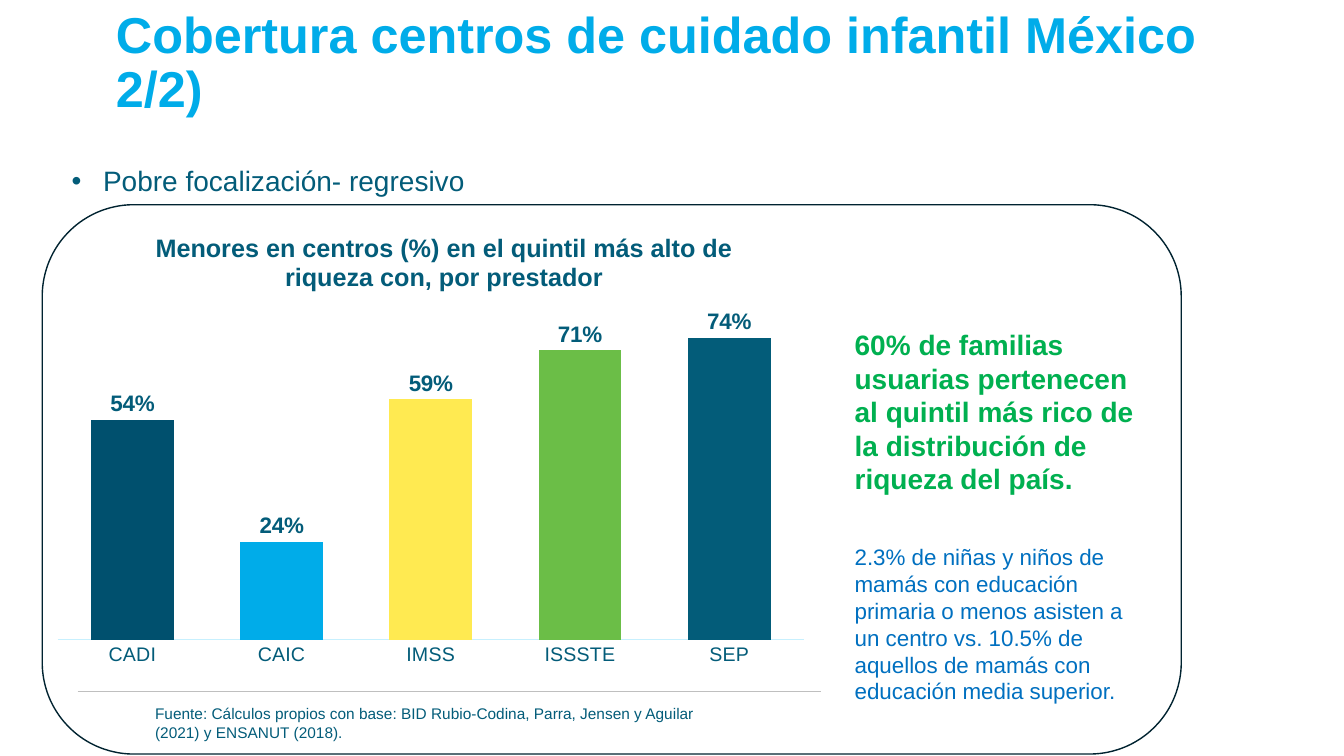
from lxml.etree import SubElement
from pptx import Presentation
from pptx.chart.data import CategoryChartData as ChartData
from pptx.dml.color import RGBColor
from pptx.enum.chart import XL_CHART_TYPE as ChartType
from pptx.enum.chart import XL_LABEL_POSITION as LabelPosition
from pptx.enum.chart import XL_TICK_MARK as TickMark
from pptx.enum.shapes import MSO_CONNECTOR as Connector
from pptx.enum.shapes import MSO_SHAPE as Shape
from pptx.enum.text import MSO_ANCHOR as Anchor
from pptx.enum.text import MSO_AUTO_SIZE as AutoSize
from pptx.enum.text import PP_ALIGN as Align
from pptx.oxml import parse_xml
from pptx.oxml.ns import nsdecls, qn
from pptx.util import Pt

COLORS = {
    "sky": "00ACE9", "teal": "035C79", "ink": "002330", "white": "FFFFFF",
    "green": "00B050", "blue": "0070C0", "gray": "BFBFBF", "pale": "C7F0FE",
    "petrol": "00506E", "yellow": "FFEA51", "lime": "6BBE47",
}
PROVIDERS = {
    "CADI": (0.54, "petrol"),
    "CAIC": (0.24, "sky"),
    "IMSS": (0.59, "yellow"),
    "ISSSTE": (0.71, "lime"),
    "SEP": (0.74, "teal"),
}


class Builder:
    font_name = "Arial"

    def __init__(self, page):
        self.page = page

    def color(self, name):
        return RGBColor.from_string(COLORS[name])

    def apply(self, target, values):
        for name, value in values.items():
            setattr(target, name, value)

    def style(self, font, size, color, bold=False):
        self.apply(font, {"name": self.font_name, "size": Pt(size), "bold": bold})
        font.color.rgb = self.color(color)

    def paint(self, format, color):
        format.fill.solid()
        format.fill.fore_color.rgb = self.color(color)

    def stroke(self, line, color, width):
        line.color.rgb = self.color(color)
        line.width = Pt(width)

    def place(self, box, frame):
        for name, value in zip(("left", "top", "width", "height"), frame):
            setattr(box, name, Pt(value))

    def set_text(self, box, text, size, color, bold=False, anchor=Anchor.TOP, spacing=1.0):
        self.apply(box.text_frame, {
            "text": text, "word_wrap": True,
            "auto_size": AutoSize.NONE, "vertical_anchor": anchor,
        })
        para = box.text_frame.paragraphs[0]
        self.apply(para, {
            "alignment": Align.LEFT, "line_spacing": spacing, "space_before": Pt(0),
        })
        self.style(para.font, size, color, bold)
        return para

    def title(self, text, frame):
        box = self.page.shapes.title
        self.place(box, frame)
        self.set_text(box, text, 36, "sky", True, Anchor.BOTTOM, 0.9)

    def bullet(self, text, frame):
        box = self.page.placeholders[1]
        self.place(box, frame)
        para = self.set_text(box, text, 20, "teal", spacing=1.07)
        properties = para._p.get_or_add_pPr()
        properties.set("marL", str(Pt(22.5)))
        properties.set("indent", str(-Pt(22.5)))

    def text(self, text, frame, size, color, bold=False):
        box = self.page.shapes.add_textbox(*map(Pt, frame))
        self.set_text(box, text, size, color, bold)

    def panel(self, frame):
        box = self.page.shapes.add_shape(Shape.ROUNDED_RECTANGLE, *map(Pt, frame))
        box.shadow.inherit = False
        self.paint(box, "white")
        self.stroke(box.line, "ink", 1)

    def rule(self, left, right, top):
        line = self.page.shapes.add_connector(
            Connector.STRAIGHT, Pt(left), Pt(top), Pt(right), Pt(top))
        self.stroke(line.line, "gray", 0.25)
        SubElement(line._element.spPr, qn("a:effectLst"))

    def layout(self, parent, inner=False, **fractions):
        for old in parent.findall(qn("c:layout")):
            parent.remove(old)
        target = '<c:layoutTarget val="inner"/>' if inner else ""
        modes = "".join(f'<c:{key}Mode val="edge"/>' for key in ("x", "y"))
        sizes = "".join(f'<c:{key} val="{value}"/>' for key, value in fractions.items())
        return parse_xml(
            f'<c:layout {nsdecls("c")}><c:manualLayout>{target}{modes}{sizes}'
            '</c:manualLayout></c:layout>')

    def chart(self, heading, providers, frame):
        data = ChartData(number_format="0%")
        data.categories = list(providers)
        data.add_series("Series 1", [value for value, color in providers.values()])
        chart = self.page.shapes.add_chart(
            ChartType.COLUMN_CLUSTERED, *map(Pt, frame), data).chart
        chart.has_legend = False
        self.style(chart.font, 14, "teal")

        chart.has_title = True
        title = chart.chart_title
        title.text_frame.text = heading
        self.style(title.text_frame.paragraphs[0].runs[0].font, 18, "teal", True)
        position = self.layout(title._element, x=0.14, y=0.01)
        title._element.find(qn("c:tx")).addnext(position)
        title.include_in_layout = False

        self.apply(chart.value_axis, {
            "visible": False, "has_major_gridlines": False,
            "minimum_scale": 0, "maximum_scale": 0.8, "major_unit": 0.2,
        })
        axis = chart.category_axis
        self.apply(axis, {
            "major_tick_mark": TickMark.NONE, "minor_tick_mark": TickMark.NONE,
        })
        self.stroke(axis.format.line, "pale", 0.75)
        self.style(axis.tick_labels.font, 14, "teal")

        plot = chart.plots[0]
        self.apply(plot, {
            "gap_width": 80, "vary_by_categories": False, "has_data_labels": True,
        })
        self.apply(plot.data_labels, {
            "show_value": True, "number_format": "0%",
            "number_format_is_linked": False, "position": LabelPosition.OUTSIDE_END,
        })
        self.style(plot.data_labels.font, 16, "teal", True)
        series = plot.series[0]
        self.paint(series.format, "sky")
        for index, (value, color) in enumerate(providers.values()):
            self.paint(series.points[index].format, color)

        area = chart._chartSpace.chart.plotArea
        area.insert(0, self.layout(area, inner=True, x=0.02, y=0.2, w=0.96, h=0.72))


def main():
    deck = Presentation()
    deck.slide_width, deck.slide_height = Pt(960), Pt(540)
    page = Builder(deck.slides.add_slide(deck.slide_layouts[1]))

    page.title("Cobertura centros de cuidado infantil México 2/2)", (75.6, 1.4, 818.6, 87.1))
    page.bullet("Pobre focalización- regresivo", (43.9, 111.6, 861.8, 31))
    page.panel((30.2, 146.2, 813.6, 392.4))
    page.text(
        "60% de familias usuarias pertenecen al quintil más rico de la "
        "distribución de riqueza del país.",
        (603.4, 230.4, 223.2, 128.2), 20, "green", True)
    page.chart(
        "Menores en centros (%) en el quintil más alto de riqueza con, por prestador",
        PROVIDERS, (30.2, 159.1, 555.1, 324))
    page.text(
        "Fuente: Cálculos propios con base: BID Rubio-Codina, Parra, Jensen y Aguilar "
        "(2021) y ENSANUT (2018).",
        (103.7, 499.7, 434.2, 33.8), 11, "teal")
    page.rule(55.4, 586.1, 493.9)
    page.text(
        "2.3% de niñas y niños de mamás con educación primaria o menos asisten a un "
        "centro vs. 10.5% de aquellos de mamás con educación media superior.",
        (603.4, 384.5, 223.2, 123.8), 16, "blue")

    deck.save("out.pptx")


if __name__ == "__main__":
    main()
